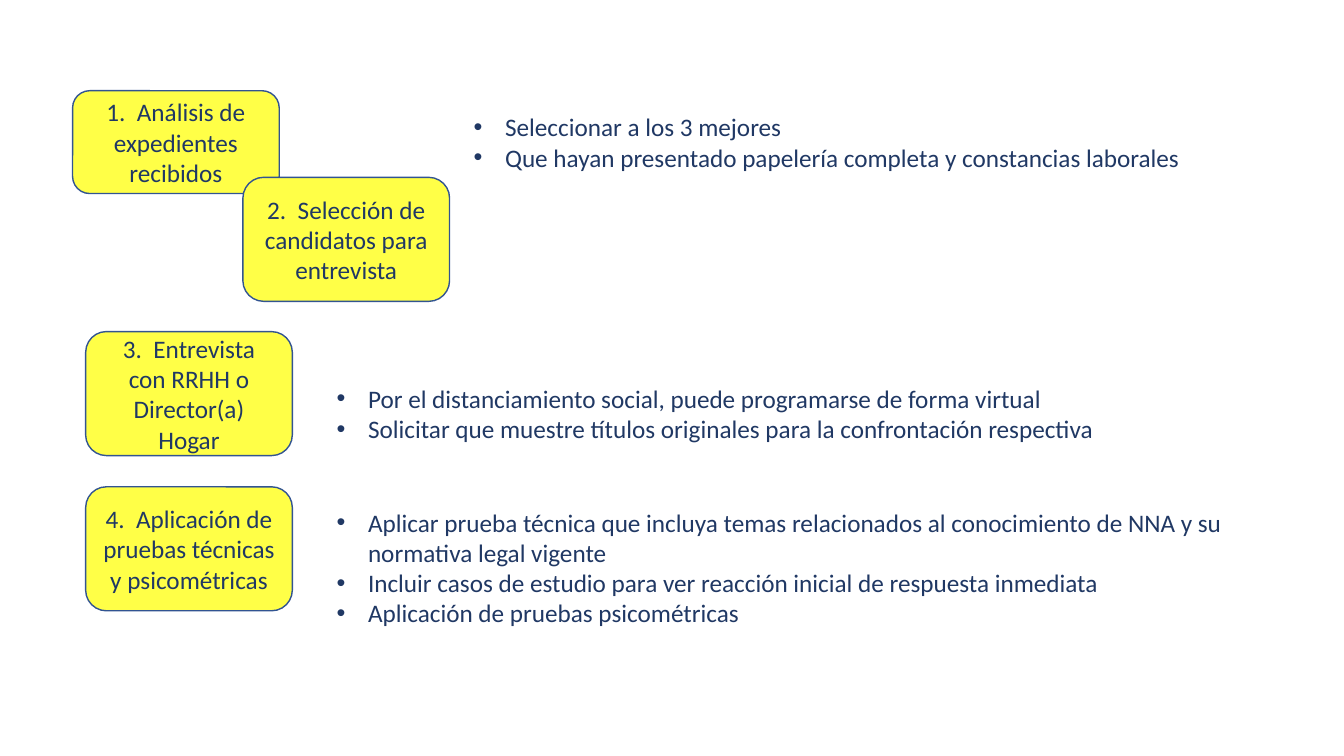
from dataclasses import dataclass

from lxml.etree import SubElement
from pptx import Presentation
from pptx.dml.color import RGBColor
from pptx.enum.shapes import MSO_SHAPE as Shape
from pptx.enum.text import MSO_ANCHOR as Anchor, MSO_AUTO_SIZE as AutoSize, PP_ALIGN as Align
from pptx.oxml.ns import qn
from pptx.util import Pt

YELLOW, BORDER, NAVY = "FFFF47", "325491", "203864"
FONT = {"name": "Calibri", "size": Pt(18)}
STEP_W, NOTES_W = 147.6, 694.8
BULLET_INDENT = 22.5


@dataclass
class Step:
    left: float
    top: float
    text: str
    height: float = 88.56


@dataclass
class Notes:
    left: float
    top: float
    height: float
    items: list[str]


CONTENT = [
    Step(51.84, 64.8, "1.  Análisis de expedientes recibidos", 73.44),
    Notes(331.2, 76.32, 51.12, [
        "Seleccionar a los 3 mejores",
        "Que hayan presentado papelería completa y constancias laborales",
    ]),
    Step(173.52, 126.72, "2.  Selección de candidatos para entrevista"),
    Notes(233.28, 270, 51.12, [
        "Por el distanciamiento social, puede programarse de forma virtual",
        "Solicitar que muestre títulos originales para la confrontación respectiva",
    ]),
    Step(61.2, 236.88, "3.  Entrevista con RRHH o Director(a) Hogar"),
    Step(61.2, 347.76, "4.  Aplicación de pruebas técnicas y psicométricas"),
    Notes(233.28, 358.56, 94.32, [
        "Aplicar prueba técnica que incluya temas relacionados al conocimiento "
        "de NNA y su normativa legal vigente",
        "Incluir casos de estudio para ver reacción inicial de respuesta inmediata",
        "Aplicación de pruebas psicométricas",
    ]),
]


def color(value: str) -> RGBColor:
    return RGBColor.from_string(value)


def apply(target, values: dict) -> None:
    for name, value in values.items():
        setattr(target, name, value)


def write(p, text: str) -> None:
    r = p.add_run()
    r.text = text
    apply(r.font, FONT)
    r.font.color.rgb = color(NAVY)


def add_bullet(p) -> None:
    pPr = p._p.get_or_add_pPr()
    pPr.set("marL", str(Pt(BULLET_INDENT)))
    pPr.set("indent", str(-Pt(BULLET_INDENT)))
    SubElement(pPr, qn("a:buFont"), typeface="Arial")
    SubElement(pPr, qn("a:buChar"), char="•")


def draw_step(s, step: Step) -> None:
    sp = s.shapes.add_shape(Shape.ROUNDED_RECTANGLE, Pt(step.left), Pt(step.top),
                            Pt(STEP_W), Pt(step.height))
    sp.shadow.inherit = False
    sp.fill.solid()
    sp.fill.fore_color.rgb = color(YELLOW)
    sp.line.color.rgb = color(BORDER)
    sp.line.width = Pt(1)
    tf = sp.text_frame
    apply(tf, {"word_wrap": True, "vertical_anchor": Anchor.MIDDLE})
    p = tf.paragraphs[0]
    p.alignment = Align.CENTER
    write(p, step.text)


def draw_notes(s, notes: Notes) -> None:
    sp = s.shapes.add_textbox(Pt(notes.left), Pt(notes.top), Pt(NOTES_W), Pt(notes.height))
    tf = sp.text_frame
    apply(tf, {"word_wrap": True, "auto_size": AutoSize.SHAPE_TO_FIT_TEXT})
    for i, item in enumerate(notes.items):
        p = tf.add_paragraph() if i else tf.paragraphs[0]
        add_bullet(p)
        write(p, item)


def main() -> None:
    prs = Presentation()
    apply(prs, {"slide_width": Pt(960), "slide_height": Pt(540)})
    s = prs.slides.add_slide(prs.slide_layouts[6])
    for element in CONTENT:
        if isinstance(element, Step):
            draw_step(s, element)
        else:
            draw_notes(s, element)
    prs.save("out.pptx")


if __name__ == "__main__":
    main()
